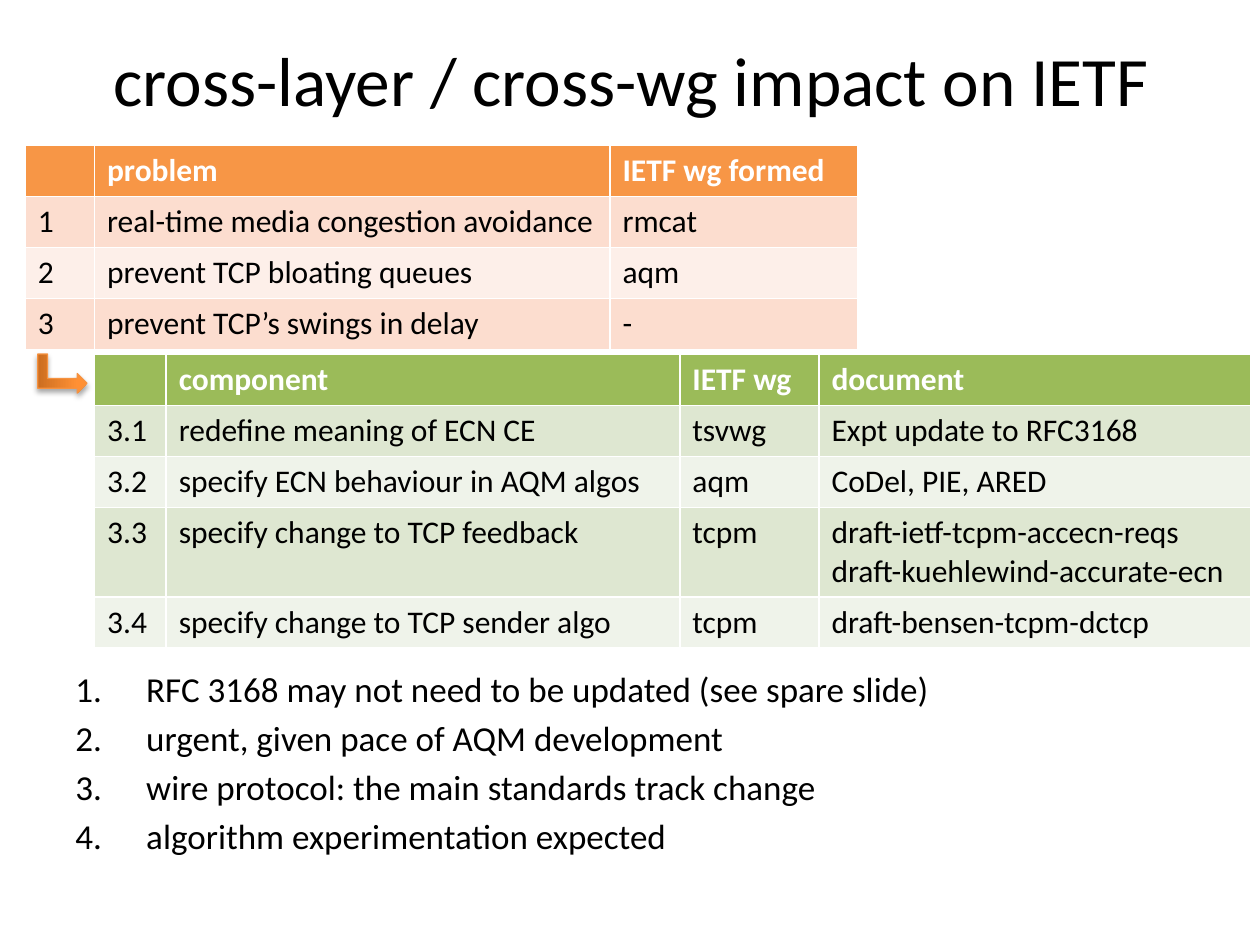
"""Build the slide on the cross-layer and cross-working-group impact on the IETF."""
from lxml import etree
from pptx import Presentation
from pptx.dml.color import RGBColor
from pptx.enum import shapes, text
from pptx.oxml import parse_xml
from pptx.oxml.ns import nsdecls
from pptx.util import Pt


def color(code):
    return RGBColor.from_string(code)


def write(frame, content, size=18, fill="000000", bold=False, align=text.PP_ALIGN.LEFT):
    frame.text = content
    for paragraph in frame.paragraphs:
        paragraph.alignment = align
        for run in paragraph.runs:
            run.font.name = "Calibri"
            run.font.size = Pt(size)
            run.font.bold = bold
            run.font.color.rgb = color(fill)


deck = Presentation()
deck.slide_width, deck.slide_height = Pt(720), Pt(540)
slide = deck.slides.add_slide(deck.slide_layouts[5])

title = slide.shapes.title
title.left, title.top, title.width, title.height = Pt(36.72), Pt(0), Pt(648), Pt(90)
title.text_frame.vertical_anchor = text.MSO_ANCHOR.MIDDLE
write(title.text_frame, "cross-layer / cross-wg impact on IETF", size=39.6,
      align=text.PP_ALIGN.CENTER)

remarks = slide.shapes.add_textbox(Pt(36), Pt(378), Pt(648), Pt(104.4)).text_frame
remarks.word_wrap = True
write(remarks, "\n".join([
    "RFC 3168 may not need to be updated (see spare slide)",
    "urgent, given pace of AQM development",
    "wire protocol: the main standards track change",
    "algorithm experimentation expected",
]), size=20)
for remark in remarks.paragraphs:
    remark.space_before = Pt(4)
    numbering = remark._p.get_or_add_pPr()
    numbering.set("marL", str(Pt(40.5)))
    numbering.set("indent", str(-Pt(40.5)))
    numbering.append(parse_xml(f'<a:buAutoNum {nsdecls("a")} type="arabicPeriod"/>'))

components = [
    ["", "component", "IETF wg", "document"],
    ["3.1", "redefine meaning of ECN CE", "tsvwg", "Expt update to RFC3168"],
    ["3.2", "specify ECN behaviour in AQM algos", "aqm", "CoDel, PIE, ARED"],
    ["3.3", "specify change to TCP feedback", "tcpm",
     "draft-ietf-tcpm-accecn-reqs\vdraft-kuehlewind-accurate-ecn"],
    ["3.4", "specify change to TCP sender algo", "tcpm", "draft-bensen-tcpm-dctcp"],
]
problems = [
    ["", "problem", "IETF wg formed"],
    ["1", "real-time media congestion avoidance", "rmcat"],
    ["2", "prevent TCP bloating queues", "aqm"],
    ["3", "prevent TCP’s swings in delay", "-"],
]
grids = [
    (components, 54, 202.4, [41, 293.5, 79.5, 247], ["9BBB59", "DEE7D1", "EFF3EA"]),
    (problems, 14.4, 83, [39.6, 294.6, 141.8], ["F79646", "FCDDCF", "FDEFE9"]),
]
for rows, left, top, widths, (header, odd, even) in grids:
    heights = [51.1 if "\v" in row[-1] else 29.2 for row in rows]
    grid = slide.shapes.add_table(len(rows), len(widths), Pt(left), Pt(top),
                                  Pt(sum(widths)), Pt(sum(heights))).table
    for column, width in zip(grid.columns, widths):
        column.width = Pt(width)
    for r, row in enumerate(rows):
        grid.rows[r].height = Pt(heights[r])
        for c, content in enumerate(row):
            cell = grid.cell(r, c)
            cell.fill.solid()
            cell.fill.fore_color.rgb = color(header if r == 0 else odd if r % 2 else even)
            write(cell.text_frame, content, bold=r == 0,
                  fill="FFFFFF" if r == 0 else "000000")

detail_arrow = slide.shapes.add_shape(shapes.MSO_SHAPE.BENT_UP_ARROW,
                                      Pt(24.5), Pt(199.4), Pt(22.3), Pt(28.1))
detail_arrow.rotation = 90
detail_arrow.fill.gradient()
detail_arrow.fill.gradient_angle = 90
for stop, position, shade in zip(detail_arrow.fill.gradient_stops, (0, 0.8),
                                 ("CC6E20", "FF9034")):
    stop.position = position
    stop.color.rgb = color(shade)
detail_arrow.line.color.rgb = color("F69240")
detail_arrow.line.width = Pt(0.75)
detail_arrow.shadow.inherit = False
effects = detail_arrow._element.spPr.find("{*}effectLst")
shadow = parse_xml(
    f'<a:outerShdw {nsdecls("a")} blurRad="{Pt(3.1)}" dist="{Pt(1.8)}" dir="5400000" '
    'rotWithShape="0"><a:srgbClr val="000000"><a:alpha val="35000"/></a:srgbClr></a:outerShdw>')
etree.SubElement(effects, shadow.tag, shadow.attrib).extend(shadow)

deck.save("out.pptx")
